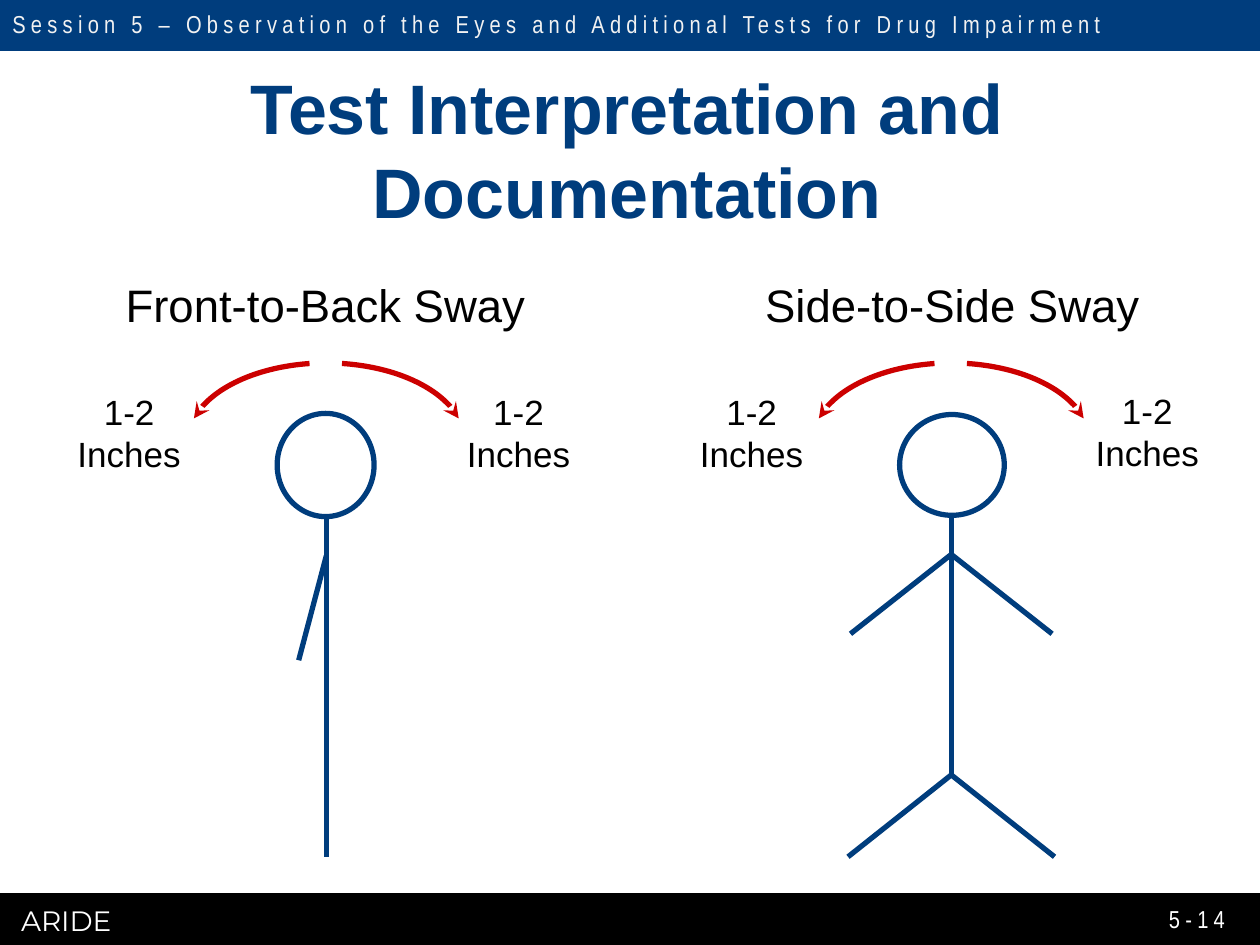
from dataclasses import dataclass

from lxml import etree
from pptx import Presentation
from pptx.dml.color import RGBColor
from pptx.enum import shapes as kinds, text as txt
from pptx.oxml import ns
from pptx.util import Pt


@dataclass(frozen=True)
class Theme:
    """Colours, fonts, type sizes and line widths of the slide."""
    navy: str = "003D7D"
    red: str = "CC0000"
    black: str = "000000"
    white: str = "FFFFFF"
    pale: str = "F2F2F2"
    sans: str = "Arial"
    thin: str = "Arial Narrow"
    brand: str = "Montserrat"
    title: int = 40
    head: int = 26
    label: int = 20
    foot: int = 16
    small: int = 14
    edge: int = 2
    stroke: int = 3


T = Theme()
ALIGN = txt.PP_ALIGN
SHAPE = kinds.MSO_SHAPE


def color(code):
    """Turn a hex code into a colour."""
    return RGBColor.from_string(code)


def write(slide, words, box, size=T.label, font=T.sans, ink=T.black,
          align=ALIGN.CENTER, bold=False, track=0, middle=False, inset=None):
    """Add a text box with one formatted paragraph."""
    frame = slide.shapes.add_textbox(*map(Pt, box)).text_frame
    frame.word_wrap = True
    if middle:
        frame.vertical_anchor = txt.MSO_ANCHOR.MIDDLE
    if inset is not None:
        frame.margin_left = frame.margin_right = Pt(inset)
        frame.margin_top = frame.margin_bottom = Pt(inset)
    para = frame.paragraphs[0]
    para.alignment = align
    run = para.add_run()
    run.text = words
    run.font.name, run.font.size, run.font.bold = font, Pt(size), bold
    run.font.color.rgb = color(ink)
    if track:
        run.font._element.set("spc", str(track * 100))


def form(parent, kind, box, ink, width=T.stroke, fill=None):
    """Add an outlined preset shape, filled or hollow."""
    item = parent.shapes.add_shape(kind, *map(Pt, box))
    item.shadow.inherit = False
    if fill:
        item.fill.solid()
        item.fill.fore_color.rgb = color(fill)
    else:
        item.fill.background()
    item.line.color.rgb = color(ink)
    item.line.width = Pt(width)
    return item


def limb(group, start, end):
    """Add one straight line of a stick figure."""
    line = group.shapes.add_connector(
        kinds.MSO_CONNECTOR.STRAIGHT, *map(Pt, (*start, *end)))
    line.line.color.rgb = color(T.navy)
    line.line.width = Pt(T.stroke)
    etree.SubElement(line._element.spPr, ns.qn("a:effectLst"))


def figure(slide, head, limbs):
    """Group a round head with its limbs."""
    group = slide.shapes.add_group_shape()
    form(group, SHAPE.OVAL, head, T.navy)
    for start, end in limbs:
        limb(group, start, end)


def sway(slide, mid):
    """Add a mirrored pair of curved arrows around a centre."""
    for flip, begin in ((False, 281.33), (True, 282.1)):
        arc = form(slide, SHAPE.ARC, (mid - 79.2, 207.4, 158.4, 90), T.red)
        arc.adjustments[0] = begin * 0.6
        arc.adjustments[1] = 350.03 * 0.6
        if flip:
            arc._element.spPr.find(ns.qn("a:xfrm")).set("flipH", "1")
        line = arc.line._get_or_add_ln()
        etree.SubElement(line, ns.qn("a:tailEnd"), type="stealth")


def bars(slide):
    """Add the header and footer bands with their text."""
    for top, fill in ((511.2, T.black), (-0.7, T.navy)):
        form(slide, SHAPE.RECTANGLE, (0, top, 720, 28.8), fill, T.edge, fill)
    write(slide, "ARIDE", (5, 512.6, 412, 26.6), size=T.foot,
          font=T.brand, ink=T.white, align=ALIGN.LEFT)
    write(slide, "Session 5 – Observation of the Eyes and Additional Tests "
          "for Drug Impairment", (0, 1.4, 676, 24.5), size=T.small,
          font=T.thin, ink=T.pale, align=ALIGN.LEFT, track=3)
    write(slide, "5-14", (539.3, 510.5, 167.8, 28.8), size=T.small,
          font=T.thin, ink=T.white, align=ALIGN.RIGHT, track=3, middle=True)


def main():
    """Build and save the slide."""
    deck = Presentation()
    deck.slide_width, deck.slide_height = Pt(720), Pt(540)
    slide = deck.slides.add_slide(deck.slide_layouts[6])
    bars(slide)
    write(slide, "Test Interpretation and Documentation",
          (41, 39.6, 634.3, 90), size=T.title, ink=T.navy, bold=True,
          middle=True, inset=0)

    side, front = 186.5, 543.6
    figure(slide, (158.4, 236.2, 55.4, 59), [
        ((side, 295.9), (side, 489.6)),
        ((side, 317.5), (side - 15.8, 377.3))])
    pairs = [((front, top), (front + sign * reach, low))
             for top, reach, low in ((316.8, 57.6, 362.2), (442.8, 59, 489.6))
             for sign in (-1, 1)]
    figure(slide, (514.1, 236.9, 59.8, 57.6),
           [((front, 295.9), (front, 443.5)), *pairs])

    for words, left, width in (("Front-to-Back Sway", 26.6, 319),
                               ("Side-to-Side Sway", 398.9, 290.9)):
        write(slide, words, (left, 154.8, width, 38.9), size=T.head)
    for mid, top in ((73.8, 219.6), (296.3, 219.6),
                     (429.5, 219.6), (655.6, 218.9)):
        write(slide, "1-2 Inches", (mid - 38, top, 76, 55.4))
    for mid in (side, front):
        sway(slide, mid)
    deck.save("out.pptx")


if __name__ == "__main__":
    main()
